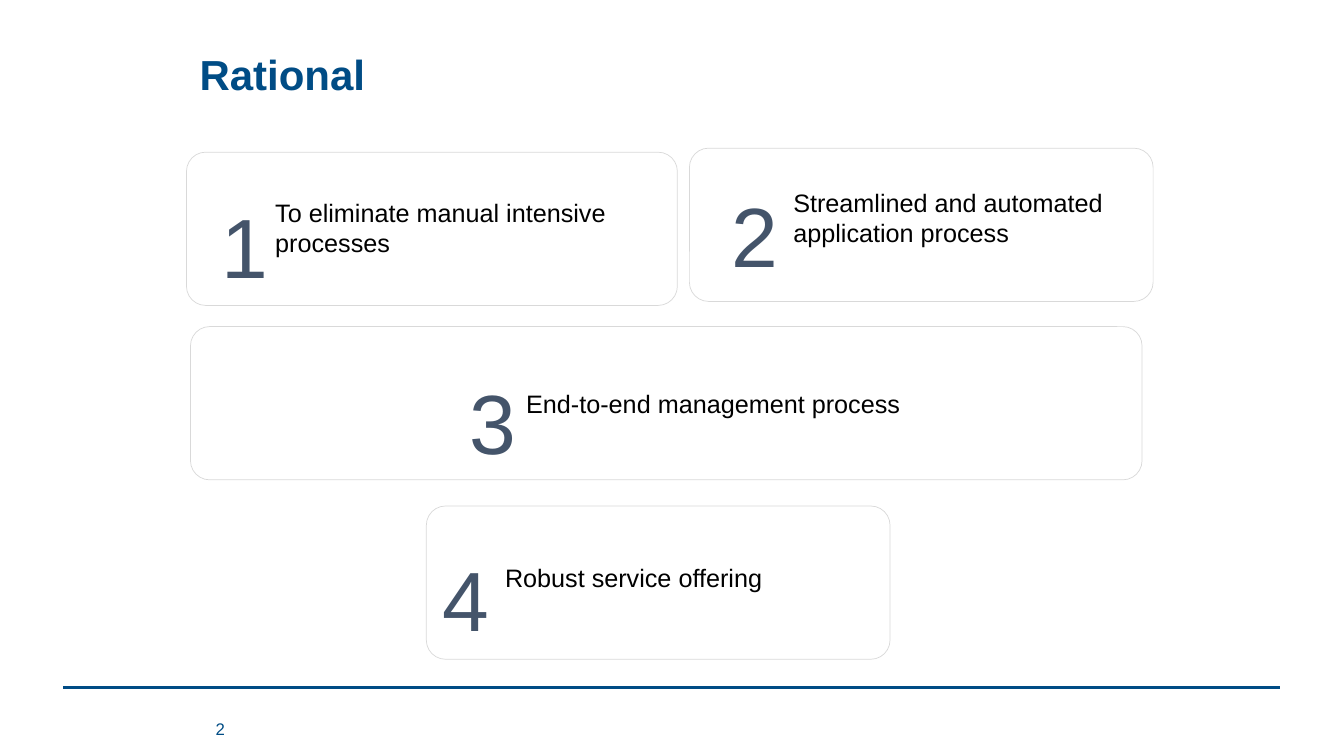
"""Build the Rational slide: four numbered cards above a footer rule."""
from dataclasses import dataclass

import pptx
import pptx.dml.color
import pptx.enum.shapes
import pptx.enum.text
import pptx.oxml
import pptx.oxml.ns
import pptx.util

COLORS = {"brand": "004C85", "digit": "44546A", "label": "000000", "border": "D9D9D9"}
WIDTH, HEIGHT = pptx.util.Inches(13.333), pptx.util.Inches(7.5)
COLUMN, ROW = WIDTH / 40, HEIGHT / 30
ANCHOR = pptx.enum.text.MSO_ANCHOR
SHAPE = pptx.enum.shapes.MSO_SHAPE
CARD_ROWS = 6.08
DIGIT_SIZE = (2.85, 7.8)


@dataclass(frozen=True)
class Area:
    left: float
    top: float
    width: float
    height: float

    def lengths(self) -> tuple[int, ...]:
        return (round(self.left * COLUMN), round(self.top * ROW),
                round(self.width * COLUMN), round(self.height * ROW))


@dataclass(frozen=True)
class Style:
    color: str
    size: float
    bold: bool = False
    spacing: float = 1.0
    anchor: ANCHOR = ANCHOR.MIDDLE
    insets: tuple[float, float, float, float] = (0.3, 0.2, 0.3, 0.2)


@dataclass(frozen=True)
class Card:
    frame: Area
    digit: tuple[float, float]
    label: Area
    text: str
    lift: float = 0
    spacing: float = 1.0


TITLE = Style("brand", 30, bold=True, spacing=0.9)
NUMBER = Style("brand", 12)
DIGIT = Style("digit", 60, spacing=1.1, anchor=ANCHOR.TOP, insets=(0.3, 0.52, 0.3, 0.2))

CARDS = [
    Card(Area(5.55, 6.04, 14.61, CARD_ROWS), (6.3, 6.8), Area(8.19, 3.76, 10.95, 10.52),
         "To eliminate manual intensive processes"),
    Card(Area(20.52, 5.88, 13.8, CARD_ROWS), (21.48, 6.36), Area(23.61, 5.2, 9.36, 8),
         "Streamlined and automated application process", lift=1.15),
    Card(Area(5.67, 12.96, 28.32, CARD_ROWS), (13.68, 13.8), Area(15.66, 12.96, 14.43, 8),
         "End-to-end management process", lift=1.72, spacing=0.9),
    Card(Area(12.69, 20.08, 13.8, CARD_ROWS), (12.87, 20.8), Area(15.03, 19.56, 14.43, 8),
         "Robust service offering", lift=1.15, spacing=0.9),
]


def rgb(name: str) -> pptx.dml.color.RGBColor:
    return pptx.dml.color.RGBColor.from_string(COLORS[name])


def add_text(page, area: Area, text: str, style: Style) -> None:
    box = page.shapes.add_textbox(*area.lengths())
    left, top, right, bottom = style.insets
    frame_format = {
        "word_wrap": True, "vertical_anchor": style.anchor,
        "margin_left": round(left * COLUMN), "margin_top": round(top * ROW),
        "margin_right": round(right * COLUMN), "margin_bottom": round(bottom * ROW),
    }
    for name, value in frame_format.items():
        setattr(box.text_frame, name, value)
    para = box.text_frame.paragraphs[0]
    para.line_spacing = style.spacing
    span = para.add_run()
    span.text = text
    font_format = {"name": "Arial", "size": pptx.util.Pt(style.size), "bold": style.bold}
    for name, value in font_format.items():
        setattr(span.font, name, value)
    span.font.color.rgb = rgb(style.color)


def add_card(page, number: int, card: Card) -> None:
    label_style = Style("label", 18, spacing=card.spacing, insets=(0, 0, 0, card.lift))
    add_text(page, card.label, card.text, label_style)
    add_text(page, Area(*card.digit, *DIGIT_SIZE), str(number), DIGIT)
    outline = page.shapes.add_shape(SHAPE.ROUNDED_RECTANGLE, *card.frame.lengths())
    outline.adjustments[0] = 0.125
    outline.shadow.inherit = False
    outline.fill.background()
    outline.line.color.rgb = rgb("border")
    outline.line.width = pptx.util.Pt(0.5)


def add_rule(page, left: float, right: float, row: float) -> None:
    rule = page.shapes.add_connector(
        pptx.enum.shapes.MSO_CONNECTOR.STRAIGHT,
        round(left * COLUMN), round(row * ROW), round(right * COLUMN), round(row * ROW))
    rule.line.color.rgb = rgb("brand")
    rule.line.width = pptx.util.Pt(2)
    properties = rule._element.spPr
    properties.append(pptx.oxml.parse_xml(f"<a:effectLst {pptx.oxml.ns.nsdecls('a')}/>"))


def main() -> None:
    deck = pptx.Presentation()
    deck.slide_width, deck.slide_height = WIDTH, HEIGHT
    page = deck.slides.add_slide(deck.slide_layouts[6])
    add_rule(page, 1.89, 38.1, 27.28)
    add_text(page, Area(5.64, 1.88, 25.86, 2.32), "Rational", TITLE)
    add_text(page, Area(6.12, 28.12, 6.75, 1.6), "2", NUMBER)
    for number, card in enumerate(CARDS, start=1):
        add_card(page, number, card)
    deck.save("out.pptx")


if __name__ == "__main__":
    main()
